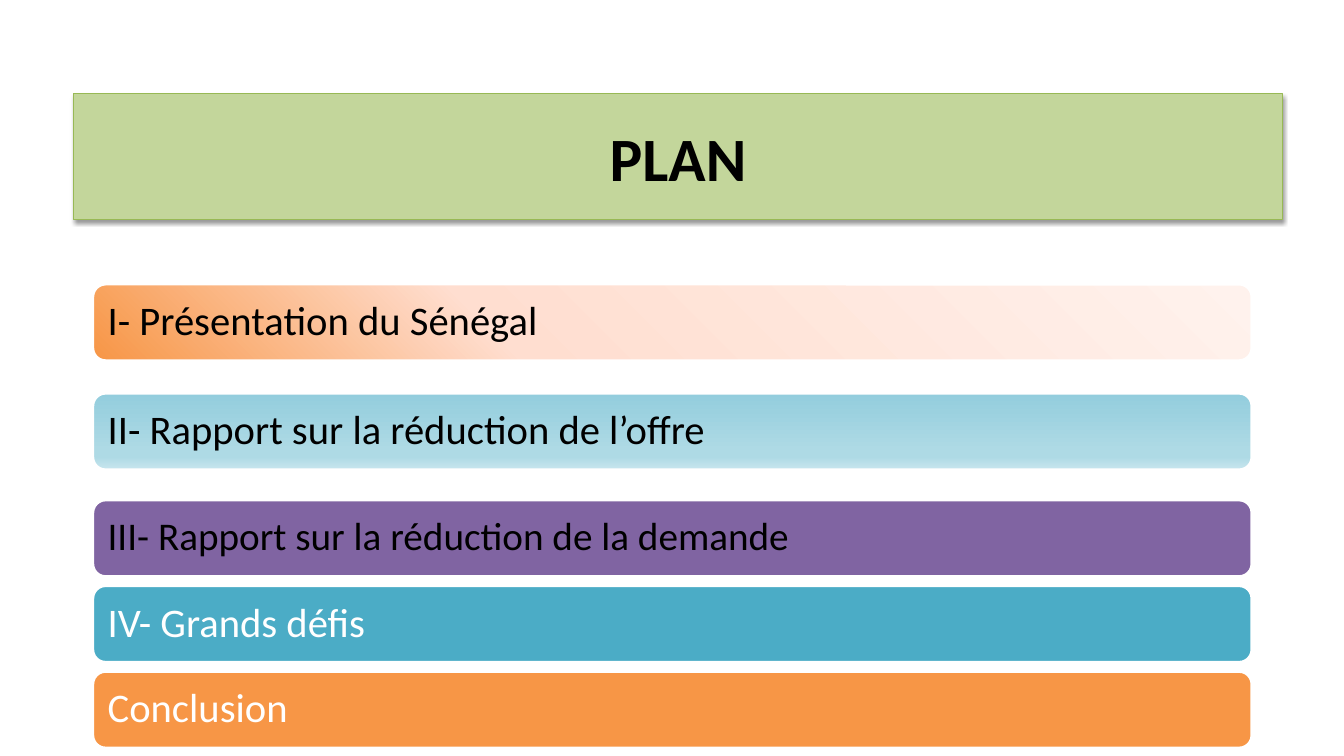
from dataclasses import dataclass
from typing import Any

from lxml.etree import SubElement
from pptx import Presentation
from pptx.dml.color import RGBColor
from pptx.enum.shapes import MSO_SHAPE as Form
from pptx.enum.text import MSO_ANCHOR as Anchor, MSO_AUTO_SIZE as Fit, PP_ALIGN as Align
from pptx.oxml.ns import qn
from pptx.util import Cm, Pt

LEFT, WIDTH, HEIGHT = Cm(2.34), Cm(29.21), Cm(1.93)


@dataclass(frozen=True)
class Bar:
    text: str
    top: float
    stops: tuple[tuple[int, str], ...]
    ink: str = "000000"
    size: int = 29
    angle: int = 0


BARS = [
    Bar("I- Présentation du Sénégal", 7.16,
        ((0, "F79646"), (35, "FFDED0"), (100, "FFF2ED")), angle=45),
    Bar("II- Rapport sur la réduction de l’offre", 9.91,
        ((0, "93CDDD"), (74, "AEDAE5"), (83, "AEDAE5"), (100, "C9E6EE")), angle=270),
    Bar("III- Rapport sur la réduction de la demande", 12.6, ((0, "8064A2"),), size=28),
    Bar("IV- Grands défis", 14.76, ((0, "4BACC6"),), ink="FFFFFF"),
    Bar("Conclusion", 16.92, ((0, "F79646"),), ink="FFFFFF"),
]


def color(code: str) -> RGBColor:
    return RGBColor.from_string(code)


def apply(item: Any, form: dict[str, Any]) -> None:
    for key, value in form.items():
        setattr(item, key, value)


def paint(shape: Any, code: str, edge: str, weight: float) -> None:
    shape.fill.solid()
    shape.fill.fore_color.rgb = color(code)
    shape.line.color.rgb = color(edge)
    shape.line.width = Pt(weight)


def blend(shape: Any, bar: Bar) -> None:
    shape.fill.gradient()
    shape.fill.gradient_angle = bar.angle
    stops = shape.element.spPr.find(qn("a:gradFill")).find(qn("a:gsLst"))
    for old in list(stops):
        stops.remove(old)
    for place, code in bar.stops:
        stop = SubElement(stops, qn("a:gs"), pos=str(place * 1000))
        SubElement(stop, qn("a:srgbClr"), val=code)


def write(shape: Any, text: str, frame: dict[str, Any], para: dict[str, Any],
          font: dict[str, Any], ink: str) -> None:
    box = shape.text_frame
    box.text = text
    line = box.paragraphs[0]
    run = line.runs[0]
    apply(box, {"word_wrap": True, "auto_size": Fit.NONE,
                "vertical_anchor": Anchor.MIDDLE, **frame})
    apply(line, para)
    apply(run.font, {"name": "Calibri", **font})
    run.font.color.rgb = color(ink)


def shade(shape: Any) -> None:
    group = SubElement(shape.element.spPr, qn("a:effectLst"))
    drop = SubElement(group, qn("a:outerShdw"), blurRad="40000", dist="20000",
                      dir="5400000", rotWithShape="0")
    tint = SubElement(drop, qn("a:srgbClr"), val="000000")
    SubElement(tint, qn("a:alpha"), val="38000")


def head(slide: Any) -> None:
    title = slide.shapes.title
    apply(title, {"left": Cm(1.85), "top": Cm(2.36), "width": Cm(30.48), "height": Cm(3.18)})
    paint(title, "C3D69B", "98B955", 0.75)
    shade(title)
    write(title, "PLAN", {}, {"alignment": Align.CENTER},
          {"size": Pt(44), "bold": True}, "000000")


def draw(slide: Any, bar: Bar) -> None:
    shape = slide.shapes.add_shape(Form.ROUNDED_RECTANGLE, LEFT, Cm(bar.top), WIDTH, HEIGHT)
    shape.shadow.inherit = False
    paint(shape, bar.stops[0][1], "FFFFFF", 2)
    if len(bar.stops) > 1:
        blend(shape, bar)
    write(shape, bar.text, {"margin_left": Cm(0.28), "margin_right": Cm(0.28)},
          {"alignment": Align.LEFT, "line_spacing": 0.9}, {"size": Pt(bar.size)}, bar.ink)


def main() -> None:
    deck = Presentation()
    apply(deck, {"slide_width": Cm(33.87), "slide_height": Cm(19.05)})
    slide = deck.slides.add_slide(deck.slide_layouts.get_by_name("Title Only"))
    for bar in BARS:
        draw(slide, bar)
    head(slide)
    deck.save("out.pptx")


if __name__ == "__main__":
    main()
